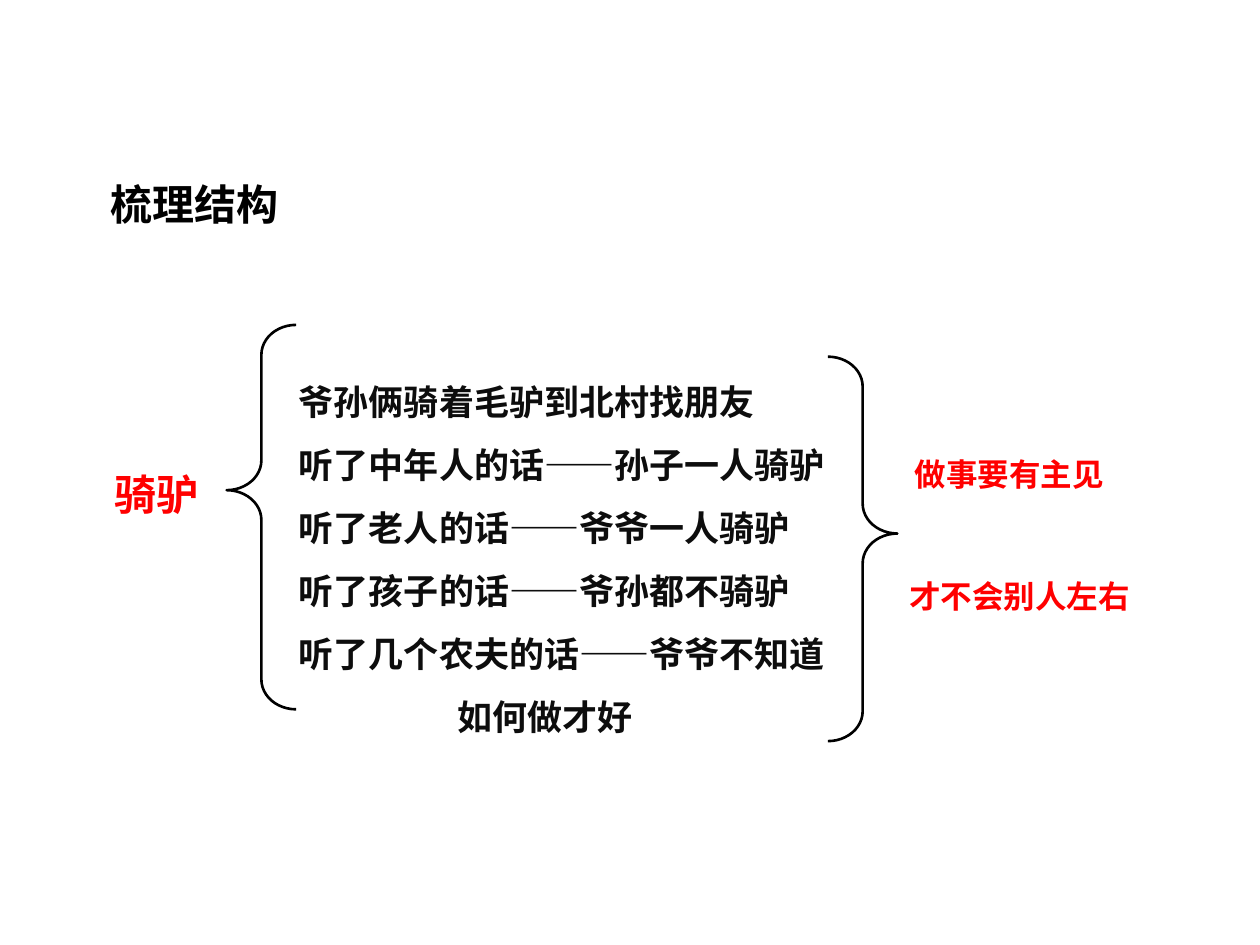
from lxml import etree
from pptx import Presentation
from pptx.dml.color import RGBColor
from pptx.enum.shapes import MSO_SHAPE
from pptx.enum.text import MSO_ANCHOR, MSO_AUTO_SIZE, PP_ALIGN
from pptx.oxml.ns import qn
from pptx.util import Cm, Pt

LEFT_BRACE = MSO_SHAPE.LEFT_BRACE
TOP, MIDDLE = MSO_ANCHOR.TOP, MSO_ANCHOR.MIDDLE
LEFT, JUSTIFY = PP_ALIGN.LEFT, PP_ALIGN.JUSTIFY
NO_AUTOFIT = MSO_AUTO_SIZE.NONE

FONT = "Noto Sans CJK SC"
BLACK, INK, RED = "000000", "0D0D0D", "FF0000"
STORY_STEPS = [
    "爷孙俩骑着毛驴到北村找朋友",
    "听了中年人的话——孙子一人骑驴",
    "听了老人的话——爷爷一人骑驴",
    "听了孩子的话——爷孙都不骑驴",
    "听了几个农夫的话——爷爷不知道",
    "如何做才好",
]
CONTINUATION_INDENT = Cm(3.19)
BRACE_WIDTH, BRACE_HEIGHT = 1.4, 7.75


def color(hex_string):
    return RGBColor.from_string(hex_string)


def place(shape, left, top, width, height):
    shape.left, shape.top = Cm(left), Cm(top)
    shape.width, shape.height = Cm(width), Cm(height)


def fill_text(shape, lines, size, hex_color, line_spacing=1.0,
              alignment=LEFT, anchor=TOP, wrap=True):
    """Write one paragraph per line, with bold Latin and East Asian type."""
    text_frame = shape.text_frame
    text_frame.text = "\n".join(lines)
    text_frame.auto_size = NO_AUTOFIT
    text_frame.word_wrap = wrap
    text_frame.vertical_anchor = anchor
    for paragraph in text_frame.paragraphs:
        paragraph.alignment = alignment
        paragraph.line_spacing = line_spacing
        paragraph.space_before = Pt(0)
        for run in paragraph.runs:
            run.font.name = FONT
            run.font.size = Pt(size)
            run.font.bold = True
            run.font.color.rgb = color(hex_color)
            east_asian = etree.SubElement(run.font._element, qn("a:ea"))
            east_asian.set("typeface", FONT)


def remove_bullet(paragraph, indent=0):
    properties = paragraph._p.get_or_add_pPr()
    properties.set("marL", str(int(indent)))
    properties.set("indent", "0")
    etree.SubElement(properties, qn("a:buNone"))


def add_label(slide, text, box, size, wrap=True):
    label = slide.shapes.add_textbox(0, 0, 0, 0)
    place(label, *box)
    fill_text(label, [text], size, RED, wrap=wrap)


def add_brace(slide, left, top, point_position, rotation=0):
    brace = slide.shapes.add_shape(LEFT_BRACE, 0, 0, 0, 0)
    place(brace, left, top, BRACE_WIDTH, BRACE_HEIGHT)
    brace.adjustments[0] = 0.43
    brace.adjustments[1] = point_position
    brace.rotation = rotation
    brace.shadow.inherit = False
    brace.fill.background()
    brace.line.color.rgb = color(BLACK)
    brace.line.width = Pt(1.5)


def main():
    presentation = Presentation()
    presentation.slide_width, presentation.slide_height = Cm(25.4), Cm(19.05)
    slide = presentation.slides.add_slide(presentation.slide_layouts[1])
    title, steps = slide.placeholders

    place(title, 1.98, 2.97, 6.15, 1.8)
    fill_text(title, ["梳理结构"], 24, BLACK, 1.5, JUSTIFY)

    place(steps, 5.77, 7.09, 11.3, 7.95)
    fill_text(steps, STORY_STEPS, 20, INK, 1.5, anchor=MIDDLE, wrap=False)
    *full_steps, continuation = steps.text_frame.paragraphs
    for paragraph in full_steps:
        remove_bullet(paragraph)
    remove_bullet(continuation, CONTINUATION_INDENT)

    add_label(slide, "骑驴", (2.06, 9.32, 2.24, 1.27), 24, wrap=False)
    add_brace(slide, 4.57, 6.55, 0.43)
    add_label(slide, "做事要有主见", (18.19, 9.04, 5.36, 1.02), 18)
    add_brace(slide, 16.69, 7.19, 0.54, rotation=180)
    add_label(slide, "才不会别人左右", (18.08, 11.51, 5.56, 1.02), 18)

    presentation.save("out.pptx")


if __name__ == "__main__":
    main()
